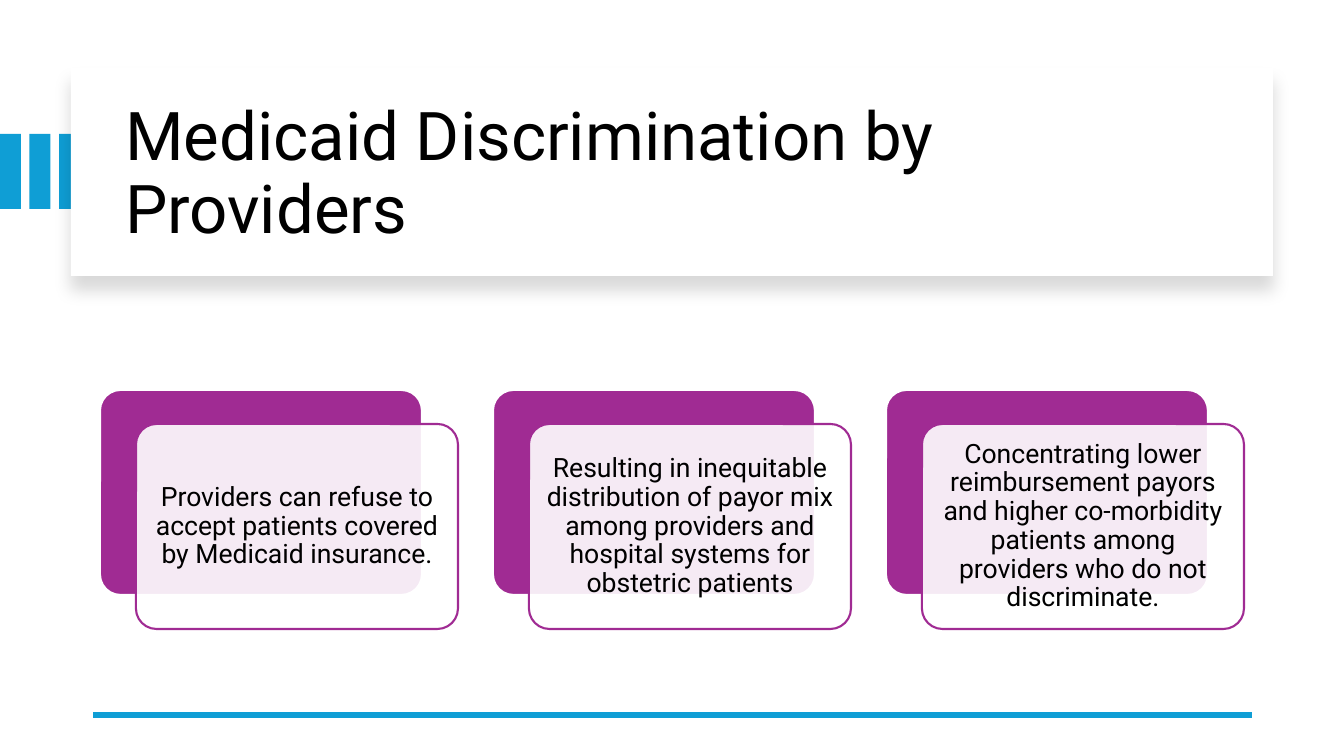
from lxml.etree import SubElement
from pptx import Presentation
from pptx.dml.color import RGBColor
from pptx.enum.shapes import MSO_CONNECTOR, MSO_SHAPE
from pptx.enum.text import MSO_ANCHOR, MSO_AUTO_SIZE, PP_ALIGN
from pptx.oxml.ns import qn
from pptx.util import Pt

TITLE = "Medicaid Discrimination by Providers"
CARDS = [
    "Providers can refuse to accept patients covered by Medicaid insurance.",
    "Resulting in inequitable distribution of payor mix among providers "
    "and hospital systems for obstetric patients",
    "Concentrating lower reimbursement payors and higher co-morbidity "
    "patients among providers who do not discriminate.",
]
HEX = {"blue": "0F9ED5", "plum": "A02B93", "white": "FFFFFF", "black": "000000"}
FONT = {"name": "Roboto", "bold": False}

WIDE, HIGH = 1344, 756
SCALE = 12192000 / WIDE
PANEL = (71, 68, 1202, 208)
HEAD = (115, 90, 1120, 171)
BAR_TOP, BAR_W, BAR_H, BAR_STEP = 134, 21, 75, 29.5
CARD_X, CARD_Y, CARD_W, CARD_H, CARD_STEP = 100, 390, 322, 205, 393
SHIFT_X, SHIFT_Y = 36, 34
RULE_L, RULE_R, RULE_Y = 93, 1252, 715
INSET = 8


def px(n):
    return round(n * SCALE)


def tint(name):
    return RGBColor.from_string(HEX[name])


def draw(kind, box, fill, line=None):
    shape = shapes.add_shape(kind, *map(px, box))
    shape.shadow.inherit = False
    shape.fill.solid()
    shape.fill.fore_color.rgb = tint(fill)
    if line:
        shape.line.color.rgb = tint(line)
        shape.line.width = Pt(1.5)
    else:
        shape.line.fill.background()
    return shape


def write(shape, text, size, align, inset=None):
    frame = shape.text_frame
    form = {"word_wrap": True, "auto_size": MSO_AUTO_SIZE.NONE,
            "vertical_anchor": MSO_ANCHOR.MIDDLE}
    if inset is not None:
        for side in ("left", "top", "right", "bottom"):
            form["margin_" + side] = px(inset)
    for key, val in form.items():
        setattr(frame, key, val)
    frame.text = text
    para = frame.paragraphs[0]
    para.alignment = align
    para.line_spacing = 0.9
    for key, val in {**FONT, "size": Pt(size)}.items():
        setattr(para.font, key, val)
    para.font.color.rgb = tint("black")


def add_alpha(parent, percent):
    color = next(parent.iter(qn("a:srgbClr")))
    SubElement(color, qn("a:alpha"), val=str(percent * 1000))


def cast_shadow(shape):
    """Give the shape a soft shadow straight below it."""
    effects = shape._element.spPr.find(qn("a:effectLst"))
    outer = SubElement(effects, qn("a:outerShdw"), blurRad=str(Pt(11)),
                       dist=str(Pt(10)), dir="5400000", algn="t", rotWithShape="0")
    SubElement(outer, qn("a:srgbClr"), val=HEX["black"])
    add_alpha(outer, 15)


deck = Presentation()
deck.slide_width, deck.slide_height = px(WIDE), px(HIGH)
slide = deck.slides.add_slide(deck.slide_layouts[5])
shapes = slide.shapes

for i in range(3):
    draw(MSO_SHAPE.RECTANGLE, (i * BAR_STEP, BAR_TOP, BAR_W, BAR_H), "blue")

panel = draw(MSO_SHAPE.RECTANGLE, PANEL, "white")
cast_shadow(panel)

title = shapes.title
panel._element.addnext(title._element)  # bring the title in front of its panel
for key, val in zip(("left", "top", "width", "height"), HEAD):
    setattr(title, key, px(val))
write(title, TITLE, 48, PP_ALIGN.LEFT)

rule = shapes.add_connector(MSO_CONNECTOR.STRAIGHT,
                            *map(px, (RULE_R, RULE_Y, RULE_L, RULE_Y)))
rule.line.color.rgb = tint("blue")
rule.line.width = Pt(4.5)
SubElement(rule._element.spPr, qn("a:effectLst"))

for i, text in enumerate(CARDS):
    x = CARD_X + i * CARD_STEP
    back = draw(MSO_SHAPE.ROUNDED_RECTANGLE,
                (x, CARD_Y, CARD_W, CARD_H), "plum", "white")
    front = draw(MSO_SHAPE.ROUNDED_RECTANGLE,
                 (x + SHIFT_X, CARD_Y + SHIFT_Y, CARD_W, CARD_H), "white", "plum")
    for shape in (back, front):
        shape.adjustments[0] = 0.1
    add_alpha(front._element.spPr.find(qn("a:solidFill")), 90)
    write(front, text, 19, PP_ALIGN.CENTER, INSET)

deck.save("out.pptx")
